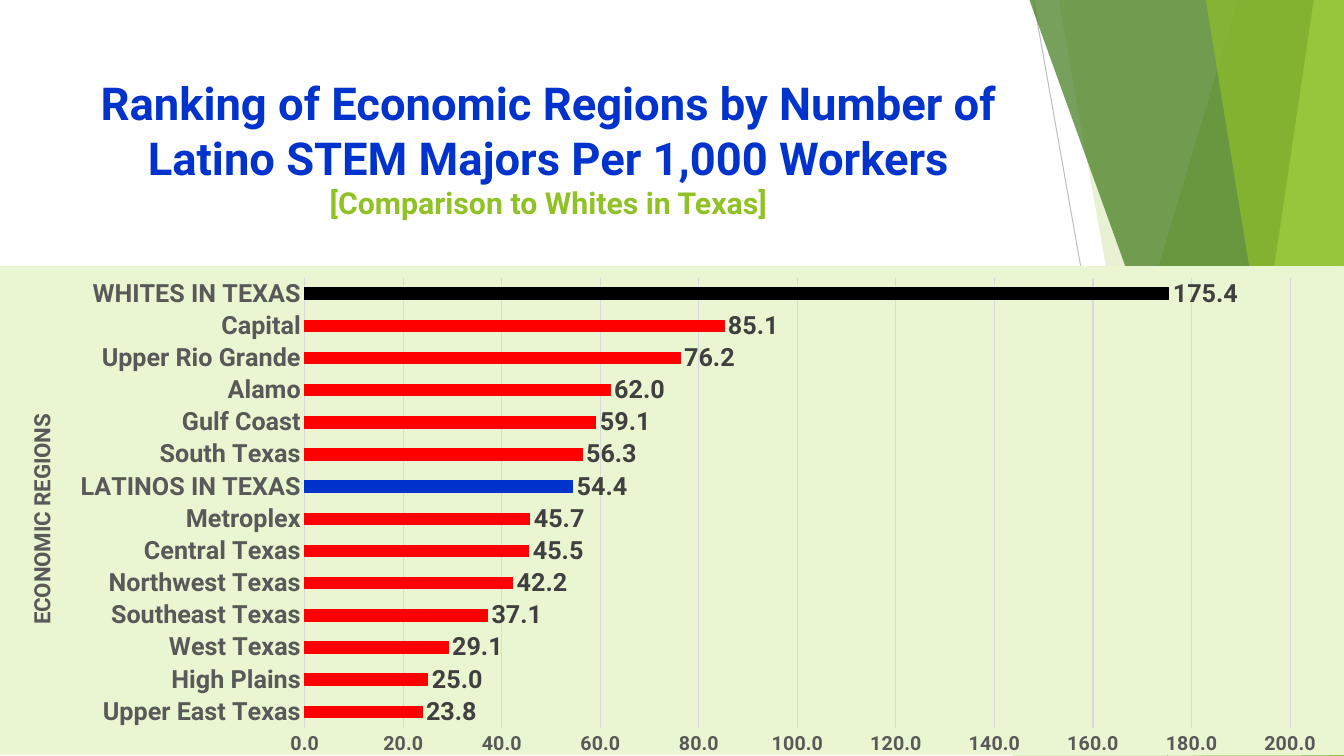
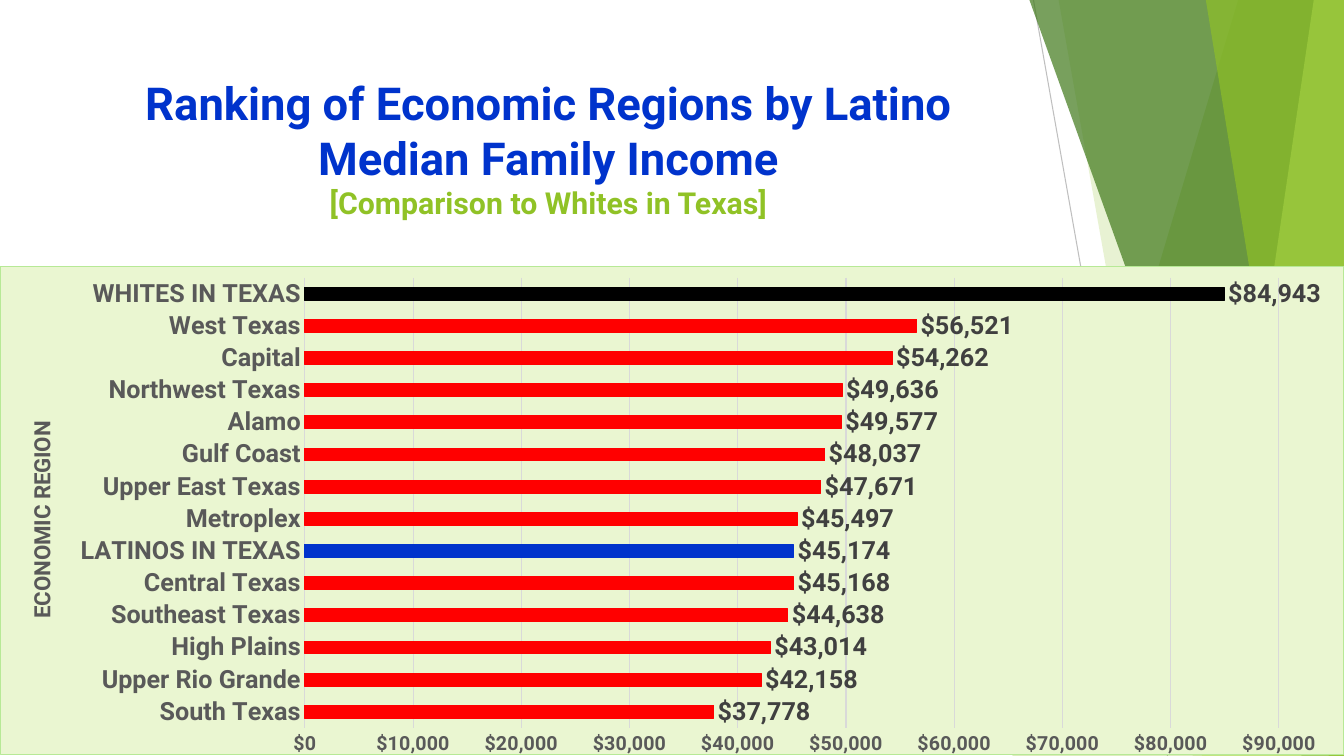
from lxml import etree
from pptx import Presentation
from pptx.chart.data import CategoryChartData
from pptx.dml.color import RGBColor
from pptx.enum import chart as c, shapes, text
from pptx.oxml import parse_xml
from pptx.oxml.ns import nsdecls, qn
from pptx.util import Inches, Pt

FONT = "Roboto"
BLUE, GREEN, RED, BLACK = "0033CC", "90C226", "FF0000", "000000"
GREY, LABEL_GREY, GRID, PANEL = "595959", "404040", "D9D9D9", "EAF6D1"
WIDTH, HEIGHT = 13.33, 7.5
CHART_TOP = 2.64
CHART_HEIGHT = HEIGHT - CHART_TOP

# Corner facets: colour, opacity in percent, top x and bottom x of the left edge
FACETS = [
    (GREEN, 30, 12.28, 10.04),
    (GREEN, 20, 10.5, 11.83),
    ("3F7819", 70, 10.21, 12.91),
    ("C0E474", 70, 13.03, 11.92),
    (GREEN, 65, 11.96, 13.18),
]
HIGHLIGHTS = {"LATINOS IN TEXAS": BLUE, "WHITES IN TEXAS": BLACK}

# Regions run from the bottom bar to the top bar
RANKINGS = [
    dict(
        title="Ranking of Economic Regions by Number of Latino STEM Majors Per 1,000 Workers",
        axis_title="ECONOMIC REGIONS", axis_title_top=1.44,
        format="0.0", maximum=200, step=20, plot_width=9.78, gap=182, border=PANEL,
        values={
            "Upper East Texas": 23.8, "High Plains": 25.0, "West Texas": 29.1,
            "Southeast Texas": 37.1, "Northwest Texas": 42.2, "Central Texas": 45.5,
            "Metroplex": 45.7, "LATINOS IN TEXAS": 54.4, "South Texas": 56.3,
            "Gulf Coast": 59.1, "Alamo": 62.0, "Upper Rio Grande": 76.2,
            "Capital": 85.1, "WHITES IN TEXAS": 175.4,
        },
    ),
    dict(
        title="Ranking of Economic Regions by Latino Median Family Income",
        axis_title="ECONOMIC REGION", axis_title_top=1.51,
        format='"$"#,##0', maximum=90000, step=10000, plot_width=9.67, gap=150, border="B7E996",
        values={
            "South Texas": 37778, "Upper Rio Grande": 42158, "High Plains": 43014,
            "Southeast Texas": 44638, "Central Texas": 45168, "LATINOS IN TEXAS": 45174,
            "Metroplex": 45497, "Upper East Texas": 47671, "Gulf Coast": 48037,
            "Alamo": 49577, "Northwest Texas": 49636, "Capital": 54262,
            "West Texas": 56521, "WHITES IN TEXAS": 84943,
        },
    ),
]


def style(target, text=None, size=None, color=BLACK, bold=True):
    """Format the font of a chart part, or of a new run of text in a paragraph."""
    if text is not None:
        target = target.add_run()
        target.text = text
    font = target.font
    font.name, font.size, font.bold = FONT, Pt(size), bold
    font.color.rgb = RGBColor.from_string(color)


def place(following, **inches):
    """Insert a manual chart layout before an element; x, y, w, h are in inches."""
    for old in following.getparent().findall(qn("c:layout")):
        old.getparent().remove(old)
    layout = parse_xml(f"<c:layout {nsdecls('c')}><c:manualLayout/></c:layout>")
    settings = {"layoutTarget": "inner"} if "w" in inches else {}
    settings.update(xMode="edge", yMode="edge")
    for key, length in inches.items():
        settings[key] = f"{length / (WIDTH if key in 'xw' else CHART_HEIGHT):.4f}"
    for key, value in settings.items():
        etree.SubElement(layout[0], qn(f"c:{key}")).set("val", value)
    following.addprevious(layout)


presentation = Presentation()
presentation.slide_width, presentation.slide_height = Inches(WIDTH), Inches(HEIGHT)

for ranking in RANKINGS:
    slide = presentation.slides.add_slide(presentation.slide_layouts[6])

    # Corner decoration
    line = slide.shapes.add_connector(
        shapes.MSO_CONNECTOR.STRAIGHT, Inches(10.25), 0, Inches(11.58), Inches(HEIGHT))
    line.line.color.rgb = RGBColor.from_string("BFBFBF")
    line.line.width = Pt(0.75)
    etree.SubElement(line._element.spPr, qn("a:effectLst"))
    for color, opacity, top_x, bottom_x in FACETS:
        builder = slide.shapes.build_freeform(Inches(top_x), 0)
        builder.add_line_segments([
            (Inches(x), Inches(y))
            for x, y in [(WIDTH, 0), (WIDTH, HEIGHT), (bottom_x, HEIGHT)]])
        facet = builder.convert_to_shape()
        facet.shadow.inherit = False
        facet.line.fill.background()
        facet.fill.solid()
        facet.fill.fore_color.rgb = RGBColor.from_string(color)
        color_element = facet._element.spPr.find(".//" + qn("a:srgbClr"))
        etree.SubElement(color_element, qn("a:alpha")).set("val", str(opacity * 1000))

    # Title
    title_box = slide.shapes.add_textbox(Inches(0.74), Inches(0.7), Inches(9.4), Inches(1.44))
    title_box.text_frame.word_wrap = True
    paragraph = title_box.text_frame.paragraphs[0]
    paragraph.alignment = text.PP_ALIGN.CENTER
    style(paragraph, ranking["title"], size=32.4, color=BLUE)
    paragraph.add_line_break()
    style(paragraph, "[Comparison to Whites in Texas]", size=21.6, color=GREEN)

    # Chart
    values = ranking["values"]
    data = CategoryChartData(number_format=ranking["format"])
    data.categories = list(values)
    data.add_series("Series 1", list(values.values()))
    chart = slide.shapes.add_chart(
        c.XL_CHART_TYPE.BAR_CLUSTERED, 0, Inches(CHART_TOP),
        Inches(WIDTH), Inches(CHART_HEIGHT), data).chart
    chart.has_title = chart.has_legend = False
    style(chart, size=10, bold=False)
    chart.element.find(qn("c:txPr")).addprevious(parse_xml(
        f"<c:spPr {nsdecls('c', 'a')}>"
        f'<a:solidFill><a:srgbClr val="{PANEL}"/></a:solidFill>'
        f'<a:ln w="9525"><a:solidFill><a:srgbClr val="{ranking["border"]}"/></a:solidFill></a:ln>'
        "</c:spPr>"))
    place(chart.element.find(".//" + qn("c:barChart")),
          x=3.02, y=0.11, w=ranking["plot_width"], h=4.49)

    # Axes
    regions, scale = chart.category_axis, chart.value_axis
    for axis, size in [(regions, 18), (scale, 14)]:
        axis.major_tick_mark = axis.minor_tick_mark = c.XL_TICK_MARK.NONE
        style(axis.tick_labels, size=size, color=GREY)
    regions.has_major_gridlines = False
    scale.has_major_gridlines = True
    for grey_line in [regions.format.line, scale.major_gridlines.format.line]:
        grey_line.color.rgb = RGBColor.from_string(GRID)
        grey_line.width = Pt(0.75)
    scale.format.line.fill.background()
    scale.minimum_scale, scale.maximum_scale = 0, ranking["maximum"]
    scale.major_unit = ranking["step"]
    scale.tick_labels.number_format = ranking["format"]
    scale.tick_labels.number_format_is_linked = False
    axis_title = regions.axis_title
    style(axis_title.text_frame.paragraphs[0], ranking["axis_title"], size=16, color=GREY)
    body = axis_title._element.find(".//" + qn("a:bodyPr"))
    body.set("rot", "-5400000")
    body.set("vert", "horz")
    place(axis_title._element.find(qn("c:overlay")), x=0.23, y=ranking["axis_title_top"])

    # Bars and their values
    plot = chart.plots[0]
    plot.gap_width = ranking["gap"]
    plot.vary_by_categories = False
    series = plot.series[0]
    bars = [(series, RED)] + [
        (series.points[index], HIGHLIGHTS[region])
        for index, region in enumerate(values) if region in HIGHLIGHTS]
    for bar, color in bars:
        bar.format.fill.solid()
        bar.format.fill.fore_color.rgb = RGBColor.from_string(color)
        bar.format.line.color.rgb = RGBColor.from_string(color)
        bar.format.line.width = Pt(0.75)
    labels = series.data_labels
    labels.show_value = True
    labels.position = c.XL_LABEL_POSITION.OUTSIDE_END
    labels.number_format = ranking["format"]
    labels.number_format_is_linked = False
    style(labels, size=18, color=LABEL_GREY)

presentation.save("out.pptx")
